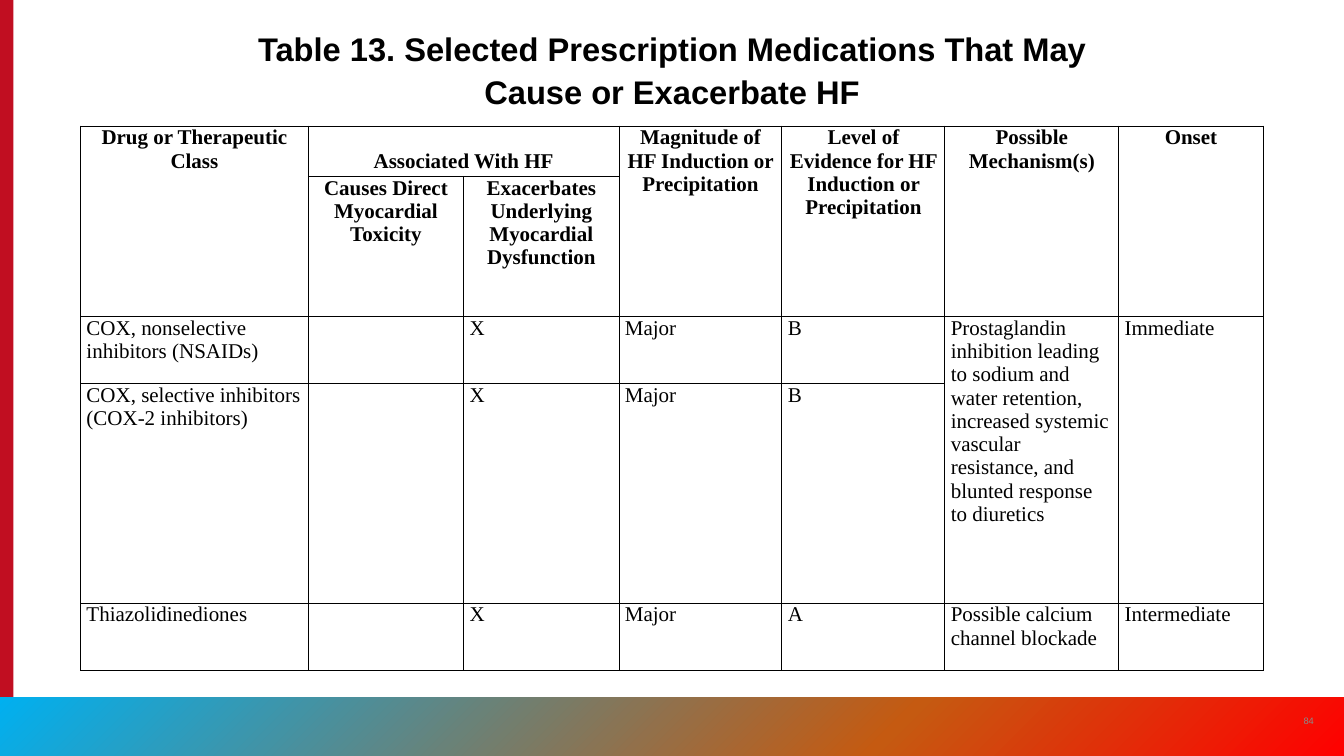
from copy import deepcopy
from dataclasses import dataclass

from lxml import etree
from pptx import Presentation
from pptx.dml.color import RGBColor
from pptx.enum.shapes import MSO_SHAPE as Shape
from pptx.enum.text import MSO_ANCHOR as Anchor, PP_ALIGN as Align
from pptx.oxml.ns import qn
from pptx.util import Inches, Pt


@dataclass(frozen=True)
class Theme:
    black: str = "000000"
    grey: str = "8A8B8A"
    crimson: str = "C10E21"
    band: tuple = ((0, "00B0F0"), (0.66, "C55A11"), (1, "FF0000"))
    sans: str = "Arial"
    serif: str = "Times New Roman"
    title_size: int = 28
    table_size: int = 18
    number_size: int = 8
    border_width: int = 1


THEME = Theme()
TITLE = "Table 13. Selected Prescription Medications That May Cause or Exacerbate HF"
COLUMNS = (2.71, 1.85, 1.85, 1.94, 1.94, 2.07, 1.72)
ROWS = (0.37, 1.67, 0.8, 2.61, 0.8)
HEADER_ROWS = 2
CELLS = (
    ("Drug or Therapeutic Class", "Associated With HF", "",
     "Magnitude of HF Induction or Precipitation",
     "Level of Evidence for HF Induction or Precipitation",
     "Possible Mechanism(s)", "Onset"),
    ("", "Causes Direct Myocardial Toxicity",
     "Exacerbates Underlying Myocardial Dysfunction", "", "", "", ""),
    ("COX, nonselective inhibitors (NSAIDs)", "", "X", "Major", "B",
     "Prostaglandin inhibition leading to sodium and water retention, "
     "increased systemic vascular resistance, and blunted response to diuretics",
     "Immediate"),
    ("COX, selective inhibitors (COX-2 inhibitors)", "", "X", "Major", "B", "", ""),
    ("Thiazolidinediones", "", "X", "Major", "A",
     "Possible calcium channel blockade", "Intermediate"),
)
GROUP_HEADER = (0, 1)
MERGES = [(GROUP_HEADER, (0, 2))]
MERGES += [((0, column), (1, column)) for column in (0, 3, 4, 5, 6)]
MERGES += [((2, column), (3, column)) for column in (5, 6)]


def place(shape, box):
    shape.left, shape.top, shape.width, shape.height = map(Inches, box)


def style_font(font, face, size, color, bold=False):
    font.name, font.size, font.bold = face, Pt(size), bold
    font.color.rgb = RGBColor.from_string(color)


def add_bar(page, box):
    bar = page.shapes.add_shape(Shape.RECTANGLE, *map(Inches, box))
    bar.shadow.inherit = False
    bar.line.fill.background()
    return bar


def add_sidebar(page, box):
    fill = add_bar(page, box).fill
    fill.solid()
    fill.fore_color.rgb = RGBColor.from_string(THEME.crimson)


def add_footer(page, box):
    left, top, width, height = box
    band = add_bar(page, box)
    band.fill.gradient()
    band.fill.gradient_angle = 315
    stop_list = next(band._element.iter(qn("a:gsLst")))
    stop_list.append(deepcopy(stop_list[-1]))
    for stop, (position, color) in zip(band.fill.gradient_stops, THEME.band):
        stop.position = position
        stop.color.rgb = RGBColor.from_string(color)
    number_box = (left + width - 0.66, top + 0.04, 0.48, 0.48)
    number = page.shapes.add_textbox(*map(Inches, number_box))
    frame = number.text_frame
    frame.word_wrap = True
    frame.vertical_anchor = Anchor.MIDDLE
    frame.text = "84"
    para = frame.paragraphs[0]
    para.alignment = Align.CENTER
    style_font(para.runs[0].font, THEME.sans, THEME.number_size, THEME.grey)


def add_title(page, box):
    title = page.shapes.title
    place(title, box)
    frame = title.text_frame
    frame.text = TITLE
    frame.word_wrap = True
    frame.vertical_anchor = Anchor.TOP
    para = frame.paragraphs[0]
    para.alignment = Align.CENTER
    para.line_spacing = 1.1
    style_font(para.runs[0].font, THEME.sans, THEME.title_size, THEME.black, True)


def add_borders(cell):
    properties = cell._tc.get_or_add_tcPr()
    for side in ("a:lnL", "a:lnR", "a:lnT", "a:lnB"):
        line = etree.SubElement(properties, qn(side), w=str(Pt(THEME.border_width)))
        fill = etree.SubElement(line, qn("a:solidFill"))
        etree.SubElement(fill, qn("a:srgbClr"), val=THEME.black)


def format_cell(cell, text, is_header):
    add_borders(cell)
    cell.fill.background()
    cell.margin_left = cell.margin_right = Inches(0.07)
    cell.margin_top = cell.margin_bottom = 0
    cell.vertical_anchor = Anchor.TOP
    cell.text_frame.text = text
    para = cell.text_frame.paragraphs[0]
    para.alignment = Align.CENTER if is_header else Align.LEFT
    style_font(para.font, THEME.serif, THEME.table_size, THEME.black, is_header)
    for span in para.runs:
        style_font(span.font, THEME.serif, THEME.table_size, THEME.black, is_header)


def add_medication_table(page, box):
    table = page.shapes.add_table(len(ROWS), len(COLUMNS), *map(Inches, box)).table
    table.first_row = table.horz_banding = False
    for column, width in zip(table.columns, COLUMNS):
        column.width = Inches(width)
    for row, height, texts in zip(table.rows, ROWS, CELLS):
        row.height = Inches(height)
    for row_index, texts in enumerate(CELLS):
        for column_index, text in enumerate(texts):
            format_cell(table.cell(row_index, column_index), text,
                        row_index < HEADER_ROWS)
    for first, last in MERGES:
        table.cell(*first).merge(table.cell(*last))
    table.cell(*GROUP_HEADER).text_frame.paragraphs[0].line_spacing = 2.0


def main():
    deck = Presentation()
    deck.slide_width, deck.slide_height = Inches(16), Inches(9)
    page = deck.slides.add_slide(deck.slide_layouts[5])
    add_sidebar(page, (0, 0, 0.16, 9))
    add_footer(page, (0, 8.3, 16, 0.7))
    add_title(page, (2.96, 0.25, 10.08, 1))
    add_medication_table(page, (0.96, 1.5, sum(COLUMNS), sum(ROWS)))
    deck.save("out.pptx")


if __name__ == "__main__":
    main()
